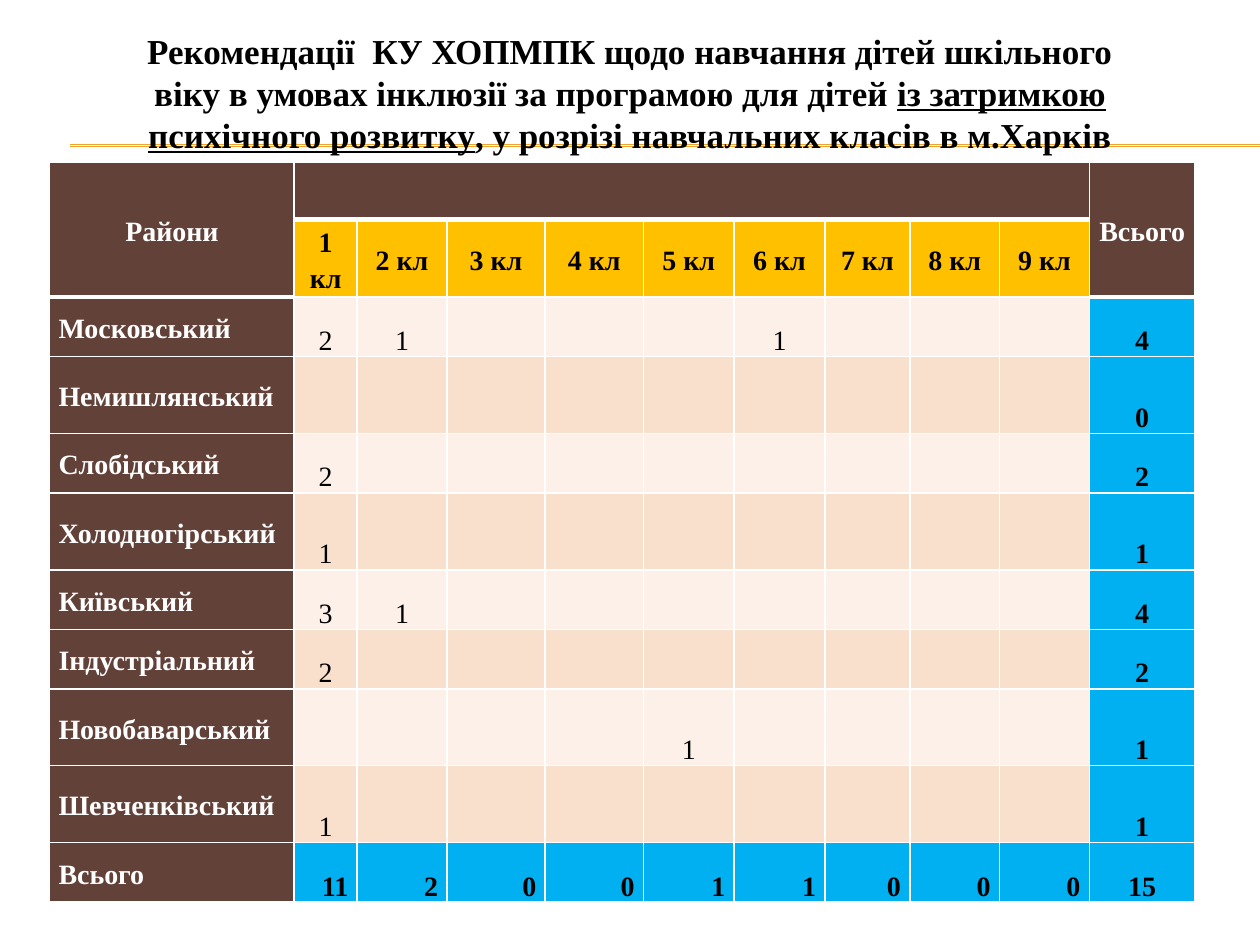
from typing import NamedTuple

from lxml import etree
from pptx import Presentation
from pptx.dml.color import RGBColor
from pptx.enum.shapes import MSO_CONNECTOR
from pptx.enum.text import MSO_ANCHOR, MSO_AUTO_SIZE, PP_ALIGN
from pptx.oxml.ns import qn
from pptx.util import Cm, Pt

LEFT, CENTER, RIGHT = PP_ALIGN.LEFT, PP_ALIGN.CENTER, PP_ALIGN.RIGHT
TOP, MIDDLE, BOTTOM = MSO_ANCHOR.TOP, MSO_ANCHOR.MIDDLE, MSO_ANCHOR.BOTTOM
STRAIGHT = MSO_CONNECTOR.STRAIGHT
FIT_SHAPE = MSO_AUTO_SIZE.SHAPE_TO_FIT_TEXT

FONT = "Times New Roman"
WHITE, BLACK = "FFFFFF", "000000"
BROWN, AMBER, BLUE, ORANGE = "624139", "FFC000", "00B0F0", "F0A22E"
BANDS = ("FCF0E8", "F9E0CD")
LOW, HIGH = 1.2, 1.55
COL_WIDTHS = (4.93, 1.27, 1.81, 1.98, 1.98, 1.83, 1.83, 1.71, 1.81, 1.81, 2.13)
CLASSES = range(1, 10)
TOTAL_COL = 10
THIN, THICK = 1, 3


class District(NamedTuple):
    name: str
    height: float
    counts: dict[int, int]  # class number -> children
    total: int


DISTRICTS = (
    District("Московський", LOW, {1: 2, 2: 1, 6: 1}, 4),
    District("Немишлянський", HIGH, {}, 0),
    District("Слобідський", LOW, {1: 2}, 2),
    District("Холодногірський", HIGH, {1: 1}, 1),
    District("Київський", LOW, {1: 3, 2: 1}, 4),
    District("Індустріальний", LOW, {1: 2}, 2),
    District("Новобаварський", HIGH, {5: 1}, 1),
    District("Шевченківський", HIGH, {1: 1}, 1),
)
CLASS_TOTALS = (11, 2, 0, 0, 1, 1, 0, 0, 0)
GRAND_TOTAL = 15
FIRST_ROW = 2
TOTAL_ROW = FIRST_ROW + len(DISTRICTS)
ROW_HEIGHTS = (1.15, HIGH, *(d.height for d in DISTRICTS), LOW)


def rgb(color: str) -> RGBColor:
    return RGBColor.from_string(color)


def add_run(p, text: str, *, size=16, color=BLACK, bold=True, underline=False) -> None:
    r = p.add_run()
    r.text = text
    f = r.font
    f.name, f.size, f.bold, f.underline = FONT, Pt(size), bold, underline
    f.color.rgb = rgb(color)


def has_thick_bottom(row: int, col: int) -> bool:
    """The heavy rule runs under the header: one row lower at both ends."""
    return row == (1 if col in (0, TOTAL_COL) else 0)


def set_borders(cell, row: int, col: int) -> None:
    top = THICK if has_thick_bottom(row - 1, col) else THIN
    bottom = THICK if has_thick_bottom(row, col) else THIN
    tc_pr = cell._tc.get_or_add_tcPr()
    for tag, width in (("a:lnL", THIN), ("a:lnR", THIN), ("a:lnT", top), ("a:lnB", bottom)):
        ln = etree.SubElement(tc_pr, qn(tag), w=str(Pt(width)))
        fill = etree.SubElement(ln, qn("a:solidFill"))
        etree.SubElement(fill, qn("a:srgbClr"), val=WHITE)


def set_fill(cell, color: str) -> None:
    cell.fill.solid()
    cell.fill.fore_color.rgb = rgb(color)


def write_cell(cell, text, fill: str, *, align=CENTER, anchor=BOTTOM, **font) -> None:
    set_fill(cell, fill)
    cell.margin_left = cell.margin_right = Cm(0.18)
    cell.margin_top = cell.margin_bottom = 0
    cell.vertical_anchor = anchor
    p = cell.text_frame.paragraphs[0]
    p.alignment, p.line_spacing = align, 1.15
    add_run(p, str(text), **font)


def add_title(s) -> None:
    title = s.shapes.title
    title.left, title.top, title.width, title.height = Cm(2.7), Cm(0.46), Cm(20), Cm(2.82)
    tf = title.text_frame
    tf.word_wrap, tf.auto_size, tf.vertical_anchor = True, FIT_SHAPE, TOP
    p = tf.paragraphs[0]
    p.alignment = CENTER
    for text, underline in (
        ("Рекомендації  КУ ХОПМПК щодо навчання дітей шкільного віку "
         "в умовах інклюзії за програмою для дітей ", False),
        ("із затримкою психічного розвитку", True),
        (", у розрізі навчальних класів в м.Харків", False),
    ):
        add_run(p, text, size=20, underline=underline)


def add_rule(s, y: float) -> None:
    """Draw a horizontal line behind the title."""
    line = s.shapes.add_connector(STRAIGHT, Cm(1.42), Cm(y), Cm(25.4), Cm(y))
    line.line.color.rgb = rgb(ORANGE)
    line.line.width = Pt(0.75)
    etree.SubElement(line.element.spPr, qn("a:effectLst"))
    s.shapes.title.element.addprevious(line.element)


def add_district_table(s) -> None:
    frame = s.shapes.add_table(len(ROW_HEIGHTS), len(COL_WIDTHS), Cm(1), Cm(3.28),
                               Cm(sum(COL_WIDTHS)), Cm(sum(ROW_HEIGHTS)))
    table = frame.table
    for column, width in zip(table.columns, COL_WIDTHS):
        column.width = Cm(width)
    for row, height in zip(table.rows, ROW_HEIGHTS):
        row.height = Cm(height)
    for row in range(len(ROW_HEIGHTS)):
        for col in range(len(COL_WIDTHS)):
            set_borders(table.cell(row, col), row, col)

    for col, text in ((0, "Райони"), (TOTAL_COL, "Всього")):
        table.cell(0, col).merge(table.cell(1, col))
        write_cell(table.cell(0, col), text, BROWN, anchor=MIDDLE, color=WHITE)
    table.cell(0, 1).merge(table.cell(0, CLASSES[-1]))
    set_fill(table.cell(0, 1), BROWN)
    for n in CLASSES:
        write_cell(table.cell(1, n), f"{n} кл", AMBER, anchor=MIDDLE)

    names = [d.name for d in DISTRICTS] + ["Всього"]
    totals = [d.total for d in DISTRICTS] + [GRAND_TOTAL]
    for row, (name, total) in enumerate(zip(names, totals), FIRST_ROW):
        write_cell(table.cell(row, 0), name, BROWN, align=LEFT, anchor=MIDDLE, color=WHITE)
        write_cell(table.cell(row, TOTAL_COL), total, BLUE)
    for i, district in enumerate(DISTRICTS):
        for n in CLASSES:
            cell = table.cell(FIRST_ROW + i, n)
            if n in district.counts:
                write_cell(cell, district.counts[n], BANDS[i % 2], bold=False)
            else:
                set_fill(cell, BANDS[i % 2])
    for n, total in zip(CLASSES, CLASS_TOTALS):
        write_cell(table.cell(TOTAL_ROW, n), total, BLUE, align=RIGHT)


def main() -> None:
    prs = Presentation()
    prs.slide_width, prs.slide_height = Cm(25.4), Cm(19.05)
    s = prs.slides.add_slide(prs.slide_layouts.get_by_name("Title Only"))
    add_title(s)
    for y in (2.92, 2.95):
        add_rule(s, y)
    add_district_table(s)
    prs.save("out.pptx")


if __name__ == "__main__":
    main()
